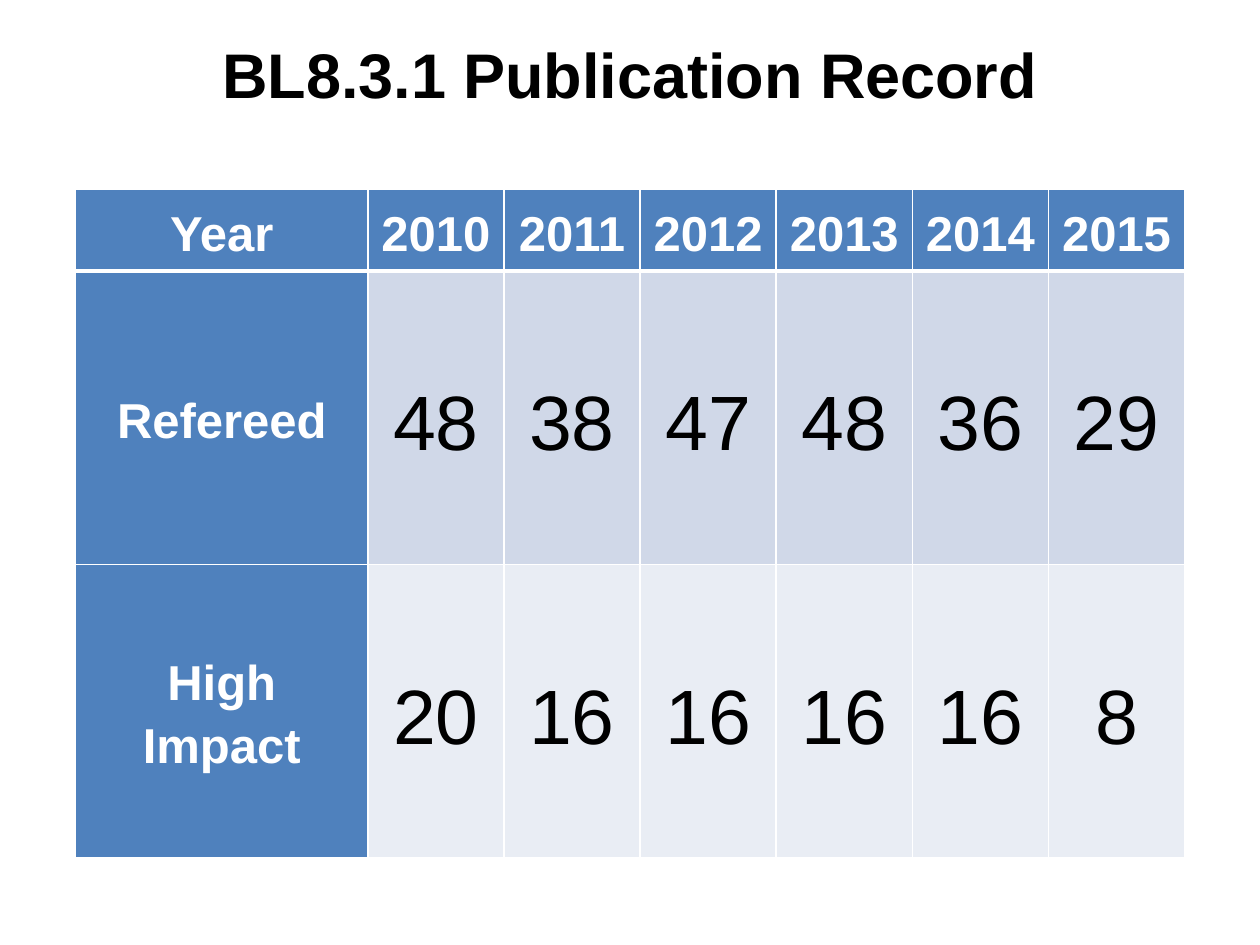
import pptx
import pptx.dml.color
import pptx.enum.text
import pptx.oxml
import pptx.oxml.ns
import pptx.util

Pt = pptx.util.Pt
WHITE, BLACK, BLUE = "FFFFFF", "000000", "4F81BD"
BAND_FILLS = ("D0D8E8", "E9EDF4")
RECORD = (
    ("Year", "2010", "2011", "2012", "2013", "2014", "2015"),
    ("Refereed", "48", "38", "47", "48", "36", "29"),
    ("High Impact", "20", "16", "16", "16", "16", "8"),
)
COLUMN_WIDTHS = [167] + [77.8] * 6
ROW_HEIGHTS = (46.8, 167.7, 167.7)
HEADING = {"size": Pt(28), "bold": True}
FIGURE = {"size": Pt(44), "bold": False}
CELL_FORMAT = {
    "margin_left": Pt(5.4),
    "margin_right": Pt(5.4),
    "margin_top": 0,
    "margin_bottom": 0,
    "vertical_anchor": pptx.enum.text.MSO_ANCHOR.MIDDLE,
}


def rgb(color):
    """Return the colour for a hex string."""
    return pptx.dml.color.RGBColor.from_string(color)


def apply_format(target, values):
    """Set each named attribute of the target."""
    for name, value in values.items():
        setattr(target, name, value)


def write_text(frame, text, color, font_format, line_spacing=1.0):
    """Write one centred Arial paragraph."""
    paragraph = frame.paragraphs[0]
    apply_format(paragraph, {"alignment": pptx.enum.text.PP_ALIGN.CENTER,
                             "line_spacing": line_spacing})
    run = paragraph.add_run()
    run.text = text
    apply_format(run.font, {"name": "Arial", **font_format})
    run.font.color.rgb = rgb(color)


def add_title(slide, text):
    """Add the title across the top of the slide."""
    title = slide.shapes.add_textbox(0, 0, Pt(720), Pt(84))
    apply_format(title.text_frame, {
        "word_wrap": True,
        "vertical_anchor": pptx.enum.text.MSO_ANCHOR.MIDDLE,
    })
    write_text(title.text_frame, text, BLACK, {"size": Pt(36), "bold": True})


def set_borders(cell, widths):
    """Draw white cell borders with the given width for each side."""
    properties = cell._tc.get_or_add_tcPr()
    for side, width in widths.items():
        properties.append(pptx.oxml.parse_xml(
            f'<a:ln{side} {pptx.oxml.ns.nsdecls("a")} w="{Pt(width)}">'
            f'<a:solidFill><a:srgbClr val="{WHITE}"/></a:solidFill></a:ln{side}>'))


def fill_cell(cell, text, row, column):
    """Format and fill one table cell according to its place."""
    is_heading = row == 0 or column == 0
    apply_format(cell, CELL_FORMAT)
    set_borders(cell, {"L": 1, "R": 1, "T": 3 if row == 1 else 1,
                       "B": 3 if row == 0 else 1})
    cell.fill.solid()
    cell.fill.fore_color.rgb = rgb(BLUE if is_heading else BAND_FILLS[row - 1])
    write_text(cell.text_frame, text, WHITE if is_heading else BLACK,
               HEADING if is_heading else FIGURE, 1.15)


def add_record_table(slide):
    """Add the table of publications by year."""
    record = slide.shapes.add_table(
        len(RECORD), len(COLUMN_WIDTHS), Pt(43.2), Pt(108),
        Pt(sum(COLUMN_WIDTHS)), Pt(sum(ROW_HEIGHTS))).table
    for column, width in zip(record.columns, COLUMN_WIDTHS):
        column.width = Pt(width)
    for row, height in zip(record.rows, ROW_HEIGHTS):
        row.height = Pt(height)
    for row, texts in enumerate(RECORD):
        for column, text in enumerate(texts):
            fill_cell(record.cell(row, column), text, row, column)


def main():
    """Build and save the publication record slide."""
    presentation = pptx.Presentation()
    apply_format(presentation, {"slide_width": Pt(720), "slide_height": Pt(540)})
    slide = presentation.slides.add_slide(presentation.slide_layouts[6])
    add_title(slide, "BL8.3.1 Publication Record")
    add_record_table(slide)
    presentation.save("out.pptx")


if __name__ == "__main__":
    main()
